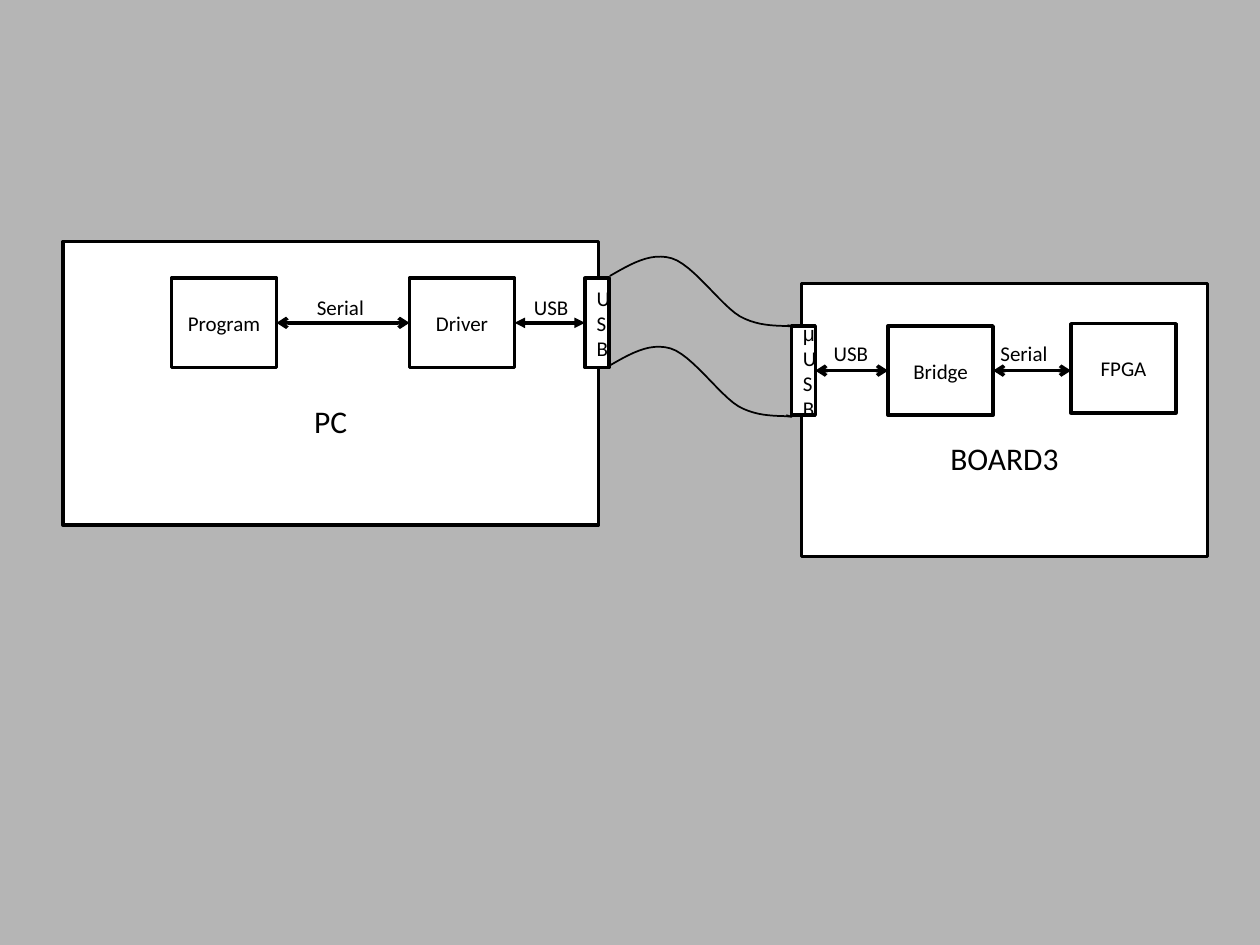
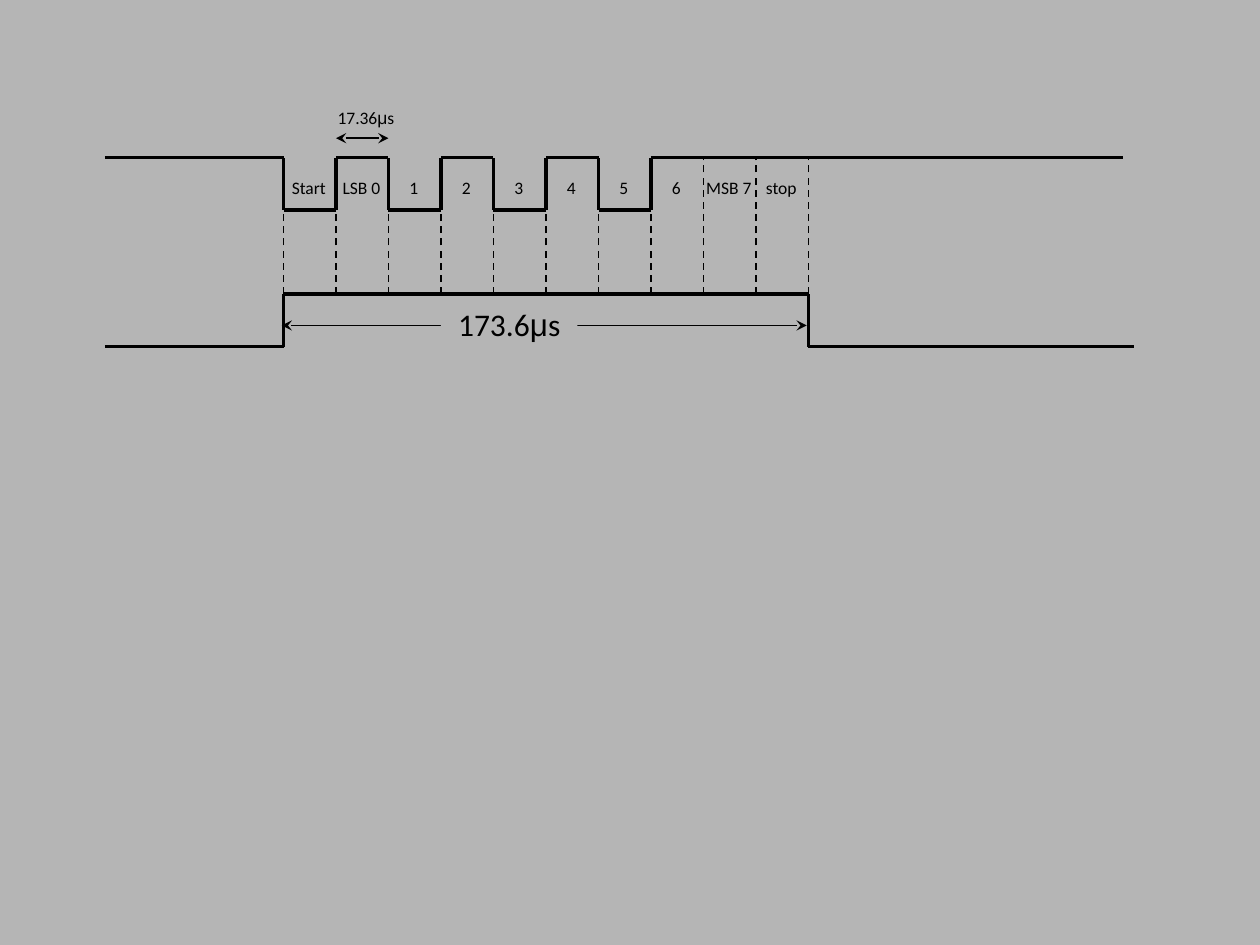
from pptx import Presentation
from pptx import util as u
from pptx.dml.color import RGBColor
from pptx.enum import dml, shapes, text
from pptx.oxml.ns import qn
from lxml import etree

Pt = u.Pt
INK, PAPER, BACK = "000000", "FFFFFF", "B5B5B5"
LEFT, MID = text.PP_ALIGN.LEFT, text.PP_ALIGN.CENTER
BOX_W, BOX_H, PORT_W = 60, 51, 13.7
BITS = ["Start", "LSB 0", "1", "2", "3", "4", "5", "6", "MSB 7", "stop"]


def paint(target, color):
    target.solid()
    target.fore_color.rgb = RGBColor.from_string(color)


def write(shape, words, size=12, align=MID, anchor=text.MSO_ANCHOR.MIDDLE,
          wrap=True, drop=0, side=7.2):
    frame = shape.text_frame
    frame.word_wrap = wrap
    frame.vertical_anchor = anchor
    frame.margin_left = frame.margin_right = Pt(side)
    frame.margin_top = Pt(3.6 + drop)
    para = frame.paragraphs[0]
    para.alignment = align
    for part in filter(None, words.partition("μ")):
        run = para.add_run()
        run.text = part
        run.font.size = Pt(size)
        run.font.name = "Arial" if part == "μ" else "Calibri"
        run.font.color.rgb = RGBColor.from_string(INK)


def box(slide, x, y, w, h, words, fill=PAPER, border=True, **style):
    shape = slide.shapes.add_shape(
        shapes.MSO_SHAPE.RECTANGLE, Pt(x), Pt(y), Pt(w), Pt(h))
    shape.shadow.inherit = False
    paint(shape.fill, fill)
    if border:
        paint(shape.line.fill, INK)
        shape.line.width = Pt(2)
    else:
        shape.line.fill.background()
    write(shape, words, **style)
    return shape


def label(slide, x, y, w, h, words, **style):
    shape = slide.shapes.add_textbox(Pt(x), Pt(y), Pt(w), Pt(h))
    write(shape, words, anchor=text.MSO_ANCHOR.TOP, wrap=False, **style)


def line(slide, x1, y1, x2, y2, width=2, dash=False, tips=None):
    wire = slide.shapes.add_connector(
        shapes.MSO_CONNECTOR.STRAIGHT, Pt(x1), Pt(y1), Pt(x2), Pt(y2))
    paint(wire.line.fill, INK)
    wire.line.width = Pt(width)
    if dash:
        wire.line.dash_style = dml.MSO_LINE.DASH
    props = wire._element.spPr
    if tips:
        for end in ("a:headEnd", "a:tailEnd"):
            etree.SubElement(props.find(qn("a:ln")), qn(end), type=tips)
    etree.SubElement(props, qn("a:effectLst"))
    return wire


def link(slide, start, end, y, tips="arrow", join=True):
    x1 = (start.left + start.width) / Pt(1)
    wire = line(slide, x1, y, end.left / Pt(1), y, tips=tips)
    wire.begin_connect(start, 3)
    if join:
        wire.end_connect(end, 1)


def curve(knots, steps=12):
    for i in range(0, len(knots) - 1, 3):
        a, b, c, d = knots[i:i + 4]
        for n in range(1, steps + 1):
            t = n / steps
            s = 1 - t
            yield tuple(Pt(s**3 * p + 3 * s * s * t * q + 3 * s * t * t * r + t**3 * v)
                        for p, q, r, v in zip(a, b, c, d))


def cable(slide, x, y):
    bends = [(0, 0), (11.5, -6.5), (23, -13.7), (35.3, -10.1),
             (47.5, -6.5), (63.4, 16.6), (74.2, 23),
             (85.7, 29.5), (98, 28.1), (103, 28.8),
             (107.3, 29.5), (101.5, 28.1), (101.5, 28.1)]
    pen = slide.shapes.build_freeform(Pt(x), Pt(y))
    pen.add_line_segments(
        list(curve([(x + dx, y + dy) for dx, dy in bends])), close=False)
    shape = pen.convert_to_shape()
    shape.shadow.inherit = False
    shape.fill.background()
    paint(shape.line.fill, INK)
    shape.line.width = Pt(1)


def page(deck):
    slide = deck.slides.add_slide(deck.slide_layouts[6])
    paint(slide.background.fill, BACK)
    return slide


def draw_link(slide):
    top, low = 159, 186.3
    box(slide, 458, 162, 232, 156, "BOARD3", size=18, drop=43.5)
    box(slide, 36, 138, 306, 162, "PC", size=18, drop=43.5)

    app = box(slide, 98, top, BOX_W, BOX_H, "Program")
    driver = box(slide, 234, top, BOX_W, BOX_H, "Driver")
    port = box(slide, 334.3, top, PORT_W, BOX_H, "USB")
    mid = top + BOX_H / 2
    link(slide, driver, port, mid, tips="triangle")
    link(slide, app, driver, mid)

    cable(slide, 348.5, 157.7)
    cable(slide, 347.8, 209.2)

    jack = box(slide, 452.2, low, PORT_W, BOX_H, "μUSB")
    chip = box(slide, 507.5, low, BOX_W, BOX_H, "Bridge")
    fpga = box(slide, 612, 185, BOX_W, BOX_H, "FPGA")
    mid = low + BOX_H / 2
    link(slide, jack, chip, mid)
    link(slide, chip, fpga, mid, join=False)

    for x, y, words in [(174, 164.5, "Serial"), (298, 164.5, "USB"),
                        (469.3, 190.8, "USB"), (564.6, 190.8, "Serial")]:
        label(slide, x, y, 45, 21.6, words, align=LEFT)


def draw_time(slide):
    left, step = 162, 30
    high, low, gate, rest = 90, 120, 168, 198
    edges = [left + step * n for n in range(len(BITS) + 1)]
    right = edges[-1]

    line(slide, 60, high, left, high)
    for n, x in enumerate(edges[:7]):
        level = high if n % 2 else low
        line(slide, x, level, x + step, level)
    line(slide, edges[7], high, 642, high)
    for x in edges[:8]:
        line(slide, x, low, x, high)

    line(slide, 60, rest, left, rest)
    line(slide, left, gate, right, gate)
    line(slide, right, rest, 648, rest)
    for x in (left, right):
        line(slide, x, rest, x, gate)

    for n, x in enumerate(edges):
        line(slide, x, gate, x, 102 if n < 8 else high, width=1, dash=True)
    for x, word in zip(edges, BITS):
        label(slide, x - 0.5, 97.5, step, 19.4, word, size=10, side=0)

    label(slide, 185.8, 57.6, 63, 19.4, "17.36μs", size=10, align=LEFT)
    line(slide, edges[1], 79, edges[2], 79, width=1, tips="stealth")
    line(slide, left - 1, 186, right - 1, 186, width=1, tips="stealth")
    box(slide, 252, 170, 78, 30, "173.6μs", fill=BACK, border=False, size=18)


def main():
    deck = Presentation()
    deck.slide_width, deck.slide_height = Pt(720), Pt(540)
    draw_link(page(deck))
    draw_time(page(deck))
    deck.save("out.pptx")


if __name__ == "__main__":
    main()
